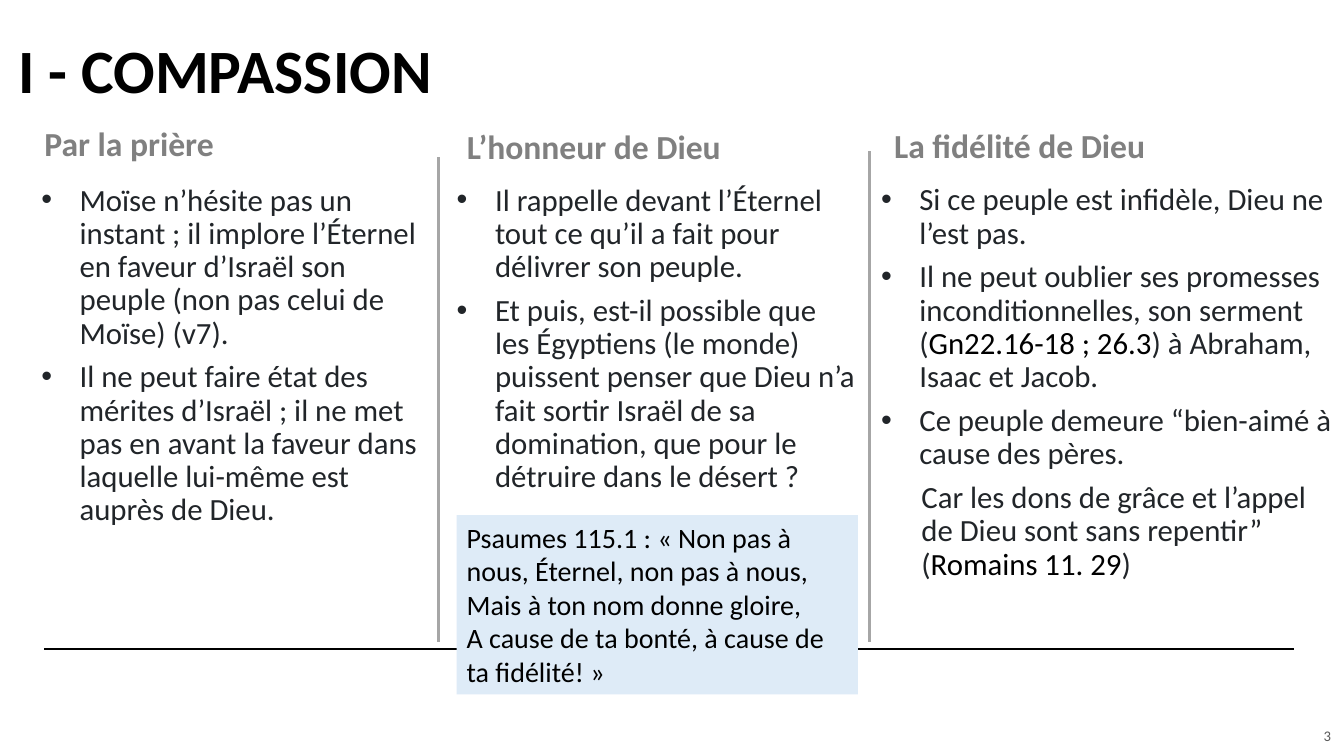
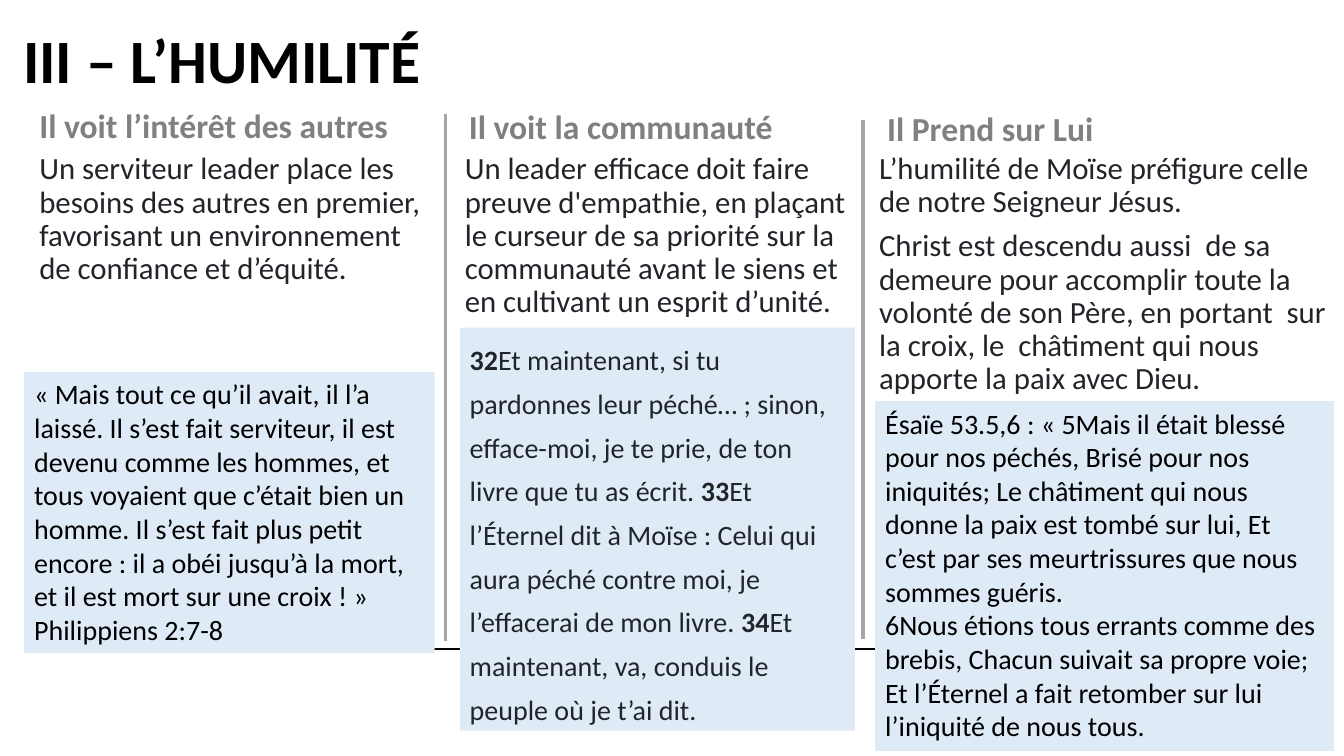
"""Build two three-column slides on compassion and humility."""
from lxml import etree
from pptx import Presentation
from pptx.dml.color import RGBColor
from pptx.enum.shapes import MSO_CONNECTOR, MSO_SHAPE
from pptx.enum.text import MSO_ANCHOR, MSO_AUTO_SIZE, PP_ALIGN
from pptx.oxml.ns import qn
from pptx.util import Pt

PX = 9144
RECTANGLE, STRAIGHT = MSO_SHAPE.RECTANGLE, MSO_CONNECTOR.STRAIGHT
TOP, MIDDLE, BOTTOM = MSO_ANCHOR.TOP, MSO_ANCHOR.MIDDLE, MSO_ANCHOR.BOTTOM
LEFT, RIGHT = PP_ALIGN.LEFT, PP_ALIGN.RIGHT
NO_FIT, GROW = MSO_AUTO_SIZE.NONE, MSO_AUTO_SIZE.SHAPE_TO_FIT_TEXT

FONT = "Calibri"
BLACK, INK, HEADING_GREY = "000000", "212529", "808080"
DIVIDER_GREY, NUMBER_GREY, QUOTE_BLUE = "A6A6A6", "595959", "DEEBF7"
COMPARISON_LAYOUT = 4

FLUSH, BULLET, INDENTED = (0, 0), (38, -38), (40, 0)
TITLE_STYLE = dict(size=44, color=BLACK, bold=True, leading=0.9)
HEADING_STYLE = dict(size=24, color=HEADING_GREY, bold=True, leading=0.9, before=7.5, anchor=BOTTOM)
BODY_STYLE = dict(size=22, color=INK, leading=0.9, before=7.5)
QUOTE_STYLE = dict(size=20, color=BLACK, fit=GROW)
VERSE_STYLE = dict(size=20, color=INK, leading=1.3, before=10, fit=GROW)
NUMBER_STYLE = dict(size=10.5, color=NUMBER_GREY, align=RIGHT, anchor=MIDDLE)

SLIDES = [
    dict(
        title="I - COMPASSION",
        title_box=(8, 35, 838, 79),
        number="3",
        dividers=[(435, 156, 637), (862, 150, 637)],
        columns=[
            ("Par la prière", (34, 126, 424, 41), (31, 178, 405, 459), [
                (BULLET, "Moïse n’hésite pas un instant ; il implore l’Éternel en faveur d’Israël "
                         "son peuple (non pas celui de Moïse) (v7)."),
                (BULLET, "Il ne peut faire état des mérites d’Israël ; il ne met pas en avant la "
                         "faveur dans laquelle lui-même est auprès de Dieu."),
            ]),
            ("L’honneur de Dieu", (453, 122, 398, 48), (443, 178, 417, 439), [
                (BULLET, "Il rappelle devant l’Éternel tout ce qu’il a fait pour délivrer son peuple."),
                (BULLET, "Et puis, est-il possible que les Égyptiens (le monde) puissent penser que "
                         "Dieu n’a fait sortir Israël de sa domination, que pour le détruire dans le "
                         "désert ?"),
            ]),
            ("La fidélité de Dieu", (877, 105, 424, 64), (864, 178, 469, 422), [
                (BULLET, "Si ce peuple est infidèle, Dieu ne l’est pas."),
                (BULLET, "Il ne peut oublier ses promesses inconditionnelles, son serment "
                         "(|Gn22.16-18 ; 26.3|) à Abraham, Isaac et Jacob."),
                (BULLET, "Ce peuple demeure “bien-aimé à cause des pères."),
                (INDENTED, "Car les dons de grâce et l’appel de Dieu sont sans repentir” "
                           "(|Romains 11. 29|)"),
            ]),
        ],
        quotes=[
            ((453, 511, 398, 178), QUOTE_STYLE, [
                "Psaumes 115.1 : « Non pas à nous, Éternel, non pas à nous,",
                "Mais à ton nom donne gloire,",
                "A cause de ta bonté, à cause de ta fidélité! »",
            ]),
        ],
    ),
    dict(
        title="III – L’HUMILITÉ",
        title_box=(13, 25, 1320, 101),
        number=None,
        dividers=[(442, 113, 636), (856, 119, 634)],
        columns=[
            ("Il voit l’intérêt des autres", (29, 77, 394, 73), (29, 147, 414, 271), [
                (FLUSH, "Un serviteur leader place les besoins des autres en premier, favorisant un "
                        "environnement de confiance et d’équité."),
            ]),
            ("Il voit la communauté", (455, 91, 381, 60), (451, 147, 405, 184), [
                (FLUSH, "Un leader efficace doit faire preuve d'empathie, en plaçant le curseur de sa "
                        "priorité sur la communauté avant le siens et en cultivant un esprit d’unité."),
            ]),
            ("Il Prend sur Lui", (870, 89, 351, 63), (862, 147, 472, 451), [
                (FLUSH, "L’humilité de Moïse préfigure celle de notre Seigneur Jésus."),
                (FLUSH, "Christ est descendu aussi  de sa demeure pour accomplir toute la volonté de "
                        "son Père, en portant  sur la croix, le  châtiment qui nous apporte la paix "
                        "avec Dieu."),
            ]),
        ],
        quotes=[
            ((24, 369, 407, 279), QUOTE_STYLE, [
                "« Mais tout ce qu’il avait, il l’a laissé. Il s’est fait serviteur, il est devenu "
                "comme les hommes, et tous voyaient que c’était bien un homme. Il s’est fait plus "
                "petit encore : il a obéi jusqu’à la mort, et il est mort sur une croix ! »",
                "Philippiens 2:7-8",
            ]),
            ((456, 325, 392, 400), VERSE_STYLE, [
                "|32|Et maintenant, si tu pardonnes leur péché… ; sinon, efface-moi, je te prie, de "
                "ton livre que tu as écrit. |33|Et l’Éternel dit à Moïse : Celui qui aura péché "
                "contre moi, je l’effacerai de mon livre. |34|Et maintenant, va, conduis le peuple "
                "où je t’ai dit.",
            ]),
            ((868, 398, 455, 347), QUOTE_STYLE, [
                "Ésaïe 53.5,6 : « 5Mais il était blessé pour nos péchés, Brisé pour nos iniquités; "
                "Le châtiment qui nous donne la paix est tombé sur lui, Et c’est par ses "
                "meurtrissures que nous sommes guéris.",
                "6Nous étions tous errants comme des brebis, Chacun suivait sa propre voie; Et "
                "l’Éternel a fait retomber sur lui l’iniquité de nous tous.",
            ]),
        ],
    ),
]


def rgb(color):
    """Turn a hex string into a colour."""
    return RGBColor.from_string(color)


def write(holder, box, paragraphs, size, color, bold=False, leading=None, before=0,
          align=LEFT, anchor=TOP, fit=NO_FIT, marked_bold=False):
    """Place a text holder and fill it; text between bars is bold or black."""
    holder.left, holder.top, holder.width, holder.height = [side * PX for side in box]
    frame = holder.text_frame
    frame.word_wrap, frame.auto_size, frame.vertical_anchor = True, fit, anchor
    for position, (indents, text) in enumerate(paragraphs):
        paragraph = frame.add_paragraph() if position else frame.paragraphs[0]
        properties = paragraph._p.get_or_add_pPr()
        margin, hanging = indents
        properties.set("marL", str(margin * PX))
        properties.set("indent", str(hanging * PX))
        if indents == BULLET:
            etree.SubElement(properties, qn("a:buFont"), typeface="Arial")
            etree.SubElement(properties, qn("a:buChar"), char="•")
        else:
            etree.SubElement(properties, qn("a:buNone"))
        paragraph.alignment = align
        paragraph.line_spacing = leading
        paragraph.space_before = Pt(before)
        font = paragraph.font
        font.name, font.size, font.bold = FONT, Pt(size), bold
        font.color.rgb = rgb(color)
        for part, words in enumerate(text.split("|")):
            if not words:
                continue
            run = paragraph.add_run()
            run.text = words
            if part % 2 and marked_bold:
                run.font.bold = True
            elif part % 2:
                run.font.color.rgb = rgb(BLACK)


prs = Presentation()
prs.slide_width, prs.slide_height = 1333 * PX, 750 * PX

for content in SLIDES:
    slide = prs.slides.add_slide(prs.slide_layouts[COMPARISON_LAYOUT])
    shapes = slide.shapes
    write(shapes.title, content["title_box"], [(FLUSH, content["title"])], **TITLE_STYLE)

    rules = [(x, top, x, bottom, DIVIDER_GREY, 2.25) for x, top, bottom in content["dividers"]]
    rules.append((44, 644, 1283, 644, BLACK, 1))
    for x1, y1, x2, y2, color, weight in rules:
        rule = shapes.add_connector(STRAIGHT, x1 * PX, y1 * PX, x2 * PX, y2 * PX)
        rule.line.color.rgb = rgb(color)
        rule.line.width = Pt(weight)
        etree.SubElement(rule.element.spPr, qn("a:effectLst"))

    text_holders = [holder for holder in slide.placeholders if holder.placeholder_format.idx]
    text_holders += [shapes.add_textbox(0, 0, PX, PX) for _ in range(2)]
    for column, (heading, heading_box, body_box, body) in enumerate(content["columns"]):
        heading_holder, body_holder = text_holders[2 * column:2 * column + 2]
        write(heading_holder, heading_box, [(FLUSH, heading)], **HEADING_STYLE)
        write(body_holder, body_box, body, **BODY_STYLE)

    for box, style, lines in content["quotes"]:
        quote = shapes.add_shape(RECTANGLE, 0, 0, PX, PX)
        quote.shadow.inherit = False
        quote.fill.solid()
        quote.fill.fore_color.rgb = rgb(QUOTE_BLUE)
        quote.line.fill.background()
        write(quote, box, [(FLUSH, line) for line in lines], marked_bold=True, **style)

    if content["number"]:
        page_number = shapes.add_textbox(0, 0, PX, PX)
        write(page_number, (1289, 710, 41, 40), [(FLUSH, content["number"])], **NUMBER_STYLE)

prs.save("out.pptx")
